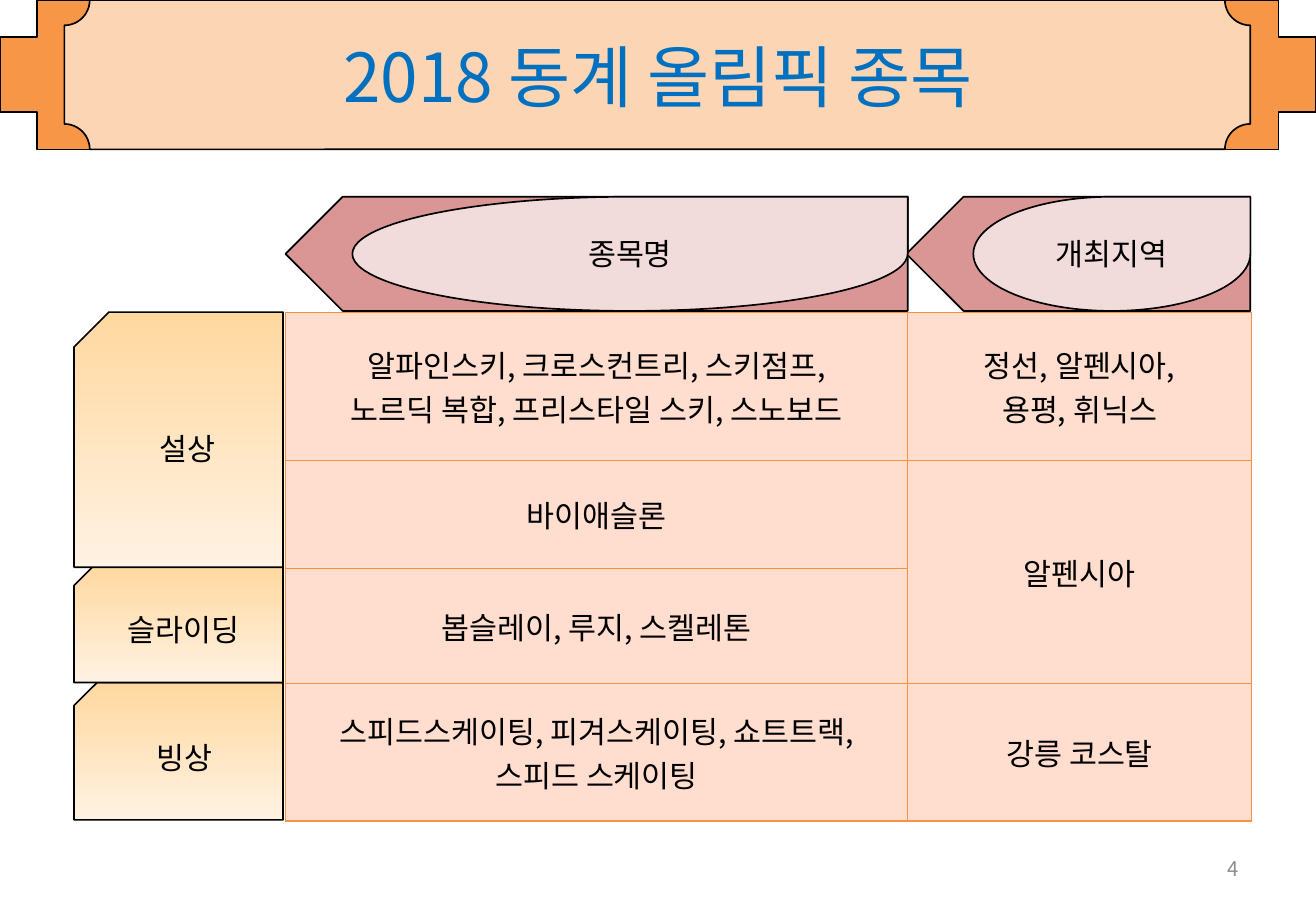
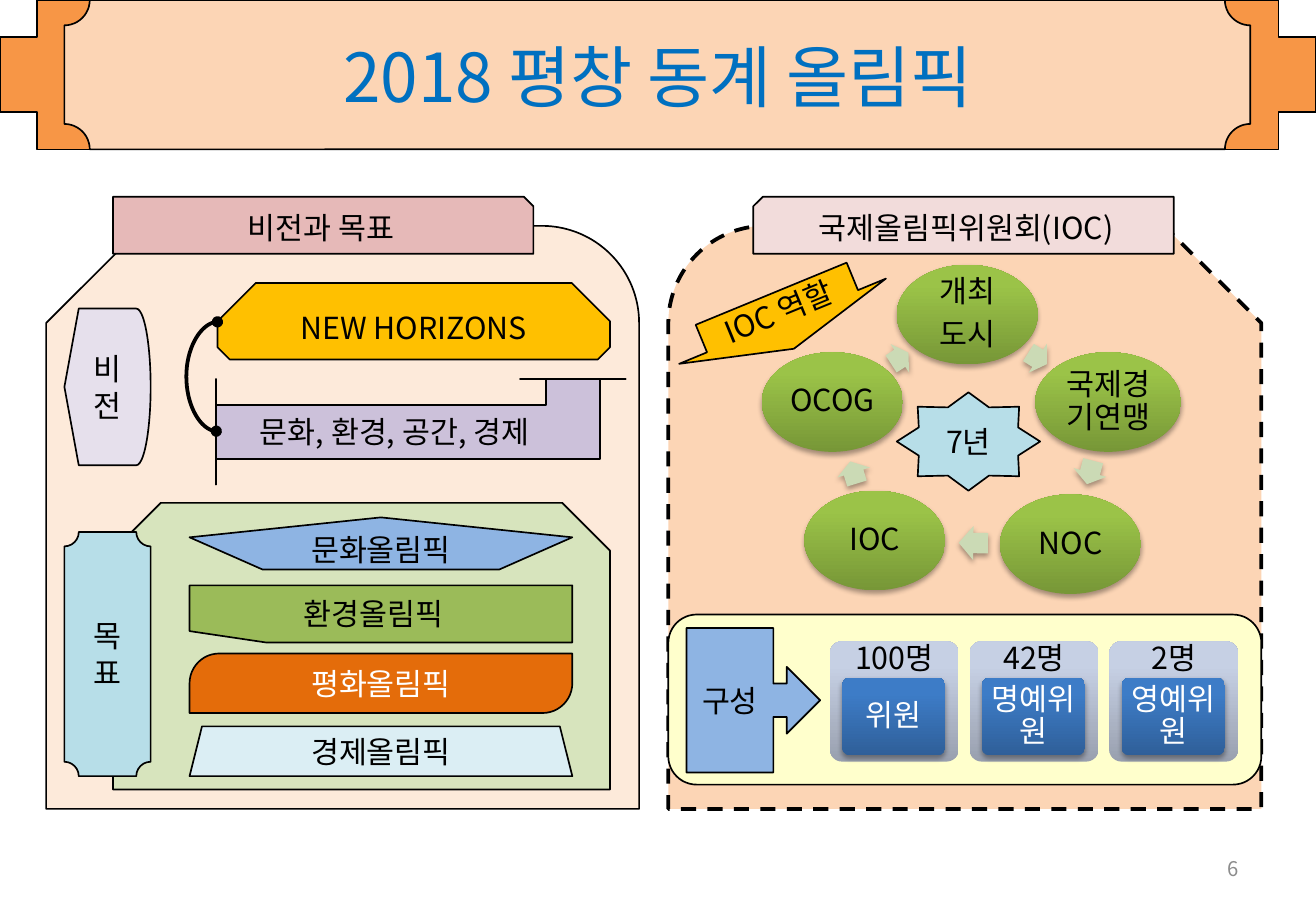
from lxml import etree
from pptx import Presentation
from pptx import util as u
from pptx.dml.color import RGBColor
from pptx.enum import dml, shapes, text
from pptx.oxml.ns import qn

M = shapes.MSO_SHAPE
A = text.PP_ALIGN
FACE = "Noto Sans CJK KR"

BLACK = RGBColor(0x00, 0x00, 0x00)
WHITE = RGBColor(0xFF, 0xFF, 0xFF)
BLUE = RGBColor(0x00, 0x70, 0xC0)
GREY = RGBColor(0x8C, 0x8C, 0x8C)
ORANGE = RGBColor(0xF7, 0x96, 0x46)
PEACH = RGBColor(0xFC, 0xD5, 0xB5)
RULE = RGBColor(0xF6, 0x92, 0x40)
CELL = RGBColor(0xFF, 0xDD, 0xCF)
ROSE = RGBColor(0xD9, 0x96, 0x94)
PINK = RGBColor(0xE6, 0xB9, 0xB8)
PALE = RGBColor(0xF2, 0xDC, 0xDB)
CREAM = RGBColor(0xFD, 0xEA, 0xDA)
GOLD = RGBColor(0xFF, 0xC0, 0x00)
LILAC = RGBColor(0xCC, 0xC1, 0xDA)
MIST = RGBColor(0xE6, 0xE0, 0xEC)
SAGE = RGBColor(0xD7, 0xE4, 0xBD)
SKY = RGBColor(0x8E, 0xB4, 0xE3)
GREEN = RGBColor(0x9B, 0xBB, 0x59)
RUST = RGBColor(0xE4, 0x6C, 0x0A)
ICE = RGBColor(0xDB, 0xEE, 0xF4)
AQUA = RGBColor(0xB7, 0xDE, 0xE8)
LEAF = RGBColor(0xCB, 0xDA, 0xB5)
LEMON = RGBColor(0xFF, 0xFF, 0xCC)

HONEY = (RGBColor(0xFF, 0xF2, 0xE3), RGBColor(0xFF, 0xD8, 0xA0), 1.0)
MOSS = (RGBColor(0x77, 0x97, 0x37), RGBColor(0x9B, 0xC3, 0x48), 0.8)
STEEL = (RGBColor(0x99, 0xA0, 0xAF), RGBColor(0xC6, 0xD0, 0xE4), 0.8)
NAVY = (RGBColor(0x2F, 0x5F, 0x99), RGBColor(0x3D, 0x7C, 0xC7), 0.8)

TIGHT = {"line_spacing": 0.9, "space_after": u.Pt(6)}


def apply(thing, *formats):
    for fmt in formats:
        for key, value in fmt.items():
            setattr(thing, key, value)


def add(parent, tag, **attrs):
    node = etree.SubElement(parent, qn(tag))
    for key, value in attrs.items():
        node.set(key, str(value))
    return node


def pads(x, y):
    return {"margin_left": u.Inches(x), "margin_right": u.Inches(x),
            "margin_top": u.Inches(y), "margin_bottom": u.Inches(y)}


class Deck:
    frame = {"word_wrap": True, "vertical_anchor": text.MSO_ANCHOR.MIDDLE,
             "auto_size": text.MSO_AUTO_SIZE.NONE}
    font = {"name": FACE, "size": u.Pt(18)}
    para = {"alignment": A.CENTER}

    def __init__(self):
        self.show = Presentation()
        apply(self.show, {"slide_width": u.Inches(10.83),
                          "slide_height": u.Inches(7.5)})
        self.base = self.show.slide_layouts[5]
        self.slide = None

    def page(self, title, number):
        self.slide = self.show.slides.add_slide(self.base)
        if len(self.show.slides) == 1:
            self.band()
        head = self.slide.shapes.title
        self.place(head, (0.54, 0, 9.75, 1.25))
        apply(head.text_frame, self.frame)
        self.say(head.text_frame, title, BLUE, size=40)
        self.label((7.76, 6.95, 2.53, 0.4), number, GREY, size=12,
                   alignment=A.RIGHT)

    def band(self):
        bars = (self.box(M.CROSS, (0, 0, 10.83, 1.23), ORANGE),
                self.box(M.PLAQUE, (0.53, 0, 9.76, 1.23), PEACH, adj=[0.17]))
        for i, bar in enumerate(bars):
            bar.element.nvSpPr.cNvPr.set("id", str(20 + i))
            self.base.shapes.element.insert(2 + i, bar.element)

    def place(self, shape, at):
        keys = ("left", "top", "width", "height")
        apply(shape, dict(zip(keys, map(u.Inches, at))))

    def say(self, frame, words, color=BLACK, size=18, **para):
        for i, line in enumerate(words.split("\n")):
            p = frame.add_paragraph() if i else frame.paragraphs[0]
            apply(p, self.para, para)
            run = p.add_run()
            run.text = line
            apply(run.font, self.font, {"size": u.Pt(size)})
            run.font.color.rgb = color

    def label(self, at, words, color=BLACK, pad=(0.1, 0.05), **style):
        item = self.slide.shapes.add_textbox(*map(u.Inches, at))
        apply(item.text_frame, self.frame, pads(*pad))
        self.say(item.text_frame, words, color, **style)

    def paint(self, fill, tone):
        if isinstance(tone, RGBColor):
            fill.solid()
            fill.fore_color.rgb = tone
            return
        fill.gradient()
        fill.gradient_angle = 90
        low, high, end = tone
        for stop, color, spot in zip(fill.gradient_stops, (low, high), (0, end)):
            stop.color.rgb = color
            stop.position = spot

    def box(self, kind, at, tone, words="", color=BLACK, adj=(), flip="",
            turn=0, edge=1, dash=None, shade=False, pad=(0.1, 0.05), **style):
        item = self.slide.shapes.add_shape(kind, *map(u.Inches, at))
        item.shadow.inherit = False
        item.rotation = turn
        for i, value in enumerate(adj):
            item.adjustments[i] = value
        self.paint(item.fill, tone)
        if edge:
            item.line.color.rgb = BLACK
            apply(item.line, {"width": u.Pt(edge), "dash_style": dash})
        else:
            item.line.fill.background()
        form = item.element.spPr
        if flip:
            form.xfrm.set("flip" + flip, "1")
        if shade:
            glow = add(form.find(qn("a:effectLst")), "a:outerShdw",
                       blurRad=u.Pt(3.1), dist=u.Pt(1.8), dir=5400000,
                       rotWithShape=0)
            add(add(glow, "a:srgbClr", val=BLACK), "a:alpha", val=35000)
        if words:
            apply(item.text_frame, self.frame, pads(*pad))
            self.say(item.text_frame, words, color, **style)
        return item

    def curve(self, start, end, bend):
        wire = self.slide.shapes.add_connector(
            shapes.MSO_CONNECTOR.CURVE, *map(u.Inches, start + end))
        wire.line.color.rgb = BLACK
        wire.line.width = u.Pt(2.25)
        form = wire.element.spPr
        add(next(form.iter(qn("a:avLst"))), "a:gd", name="adj1",
            fmla=f"val {bend * 100000}")
        for tag in ("a:headEnd", "a:tailEnd"):
            add(form.find(qn("a:ln")), tag, type="oval")
        add(form, "a:effectLst")

    def grid(self, at, wide, high, rows, spans):
        item = self.slide.shapes.add_table(len(high), len(wide),
                                           *map(u.Inches, at))
        table = item.table
        apply(table, {"first_row": False, "horz_banding": False})
        for col, size in zip(table.columns, wide):
            col.width = u.Inches(size)
        for row, size in zip(table.rows, high):
            row.height = u.Inches(size)
        for r, row in enumerate(rows):
            for c, words in enumerate(row):
                cell = table.cell(r, c)
                self.paint(cell.fill, CELL)
                cell.vertical_anchor = text.MSO_ANCHOR.MIDDLE
                if words:
                    self.say(cell.text_frame, words)
        for first, last in spans:
            table.cell(*first).merge(table.cell(*last))
        for form in item.element.iter(qn("a:tcPr")):
            for i, side in enumerate("LRTB"):
                line = add(form, "a:ln" + side, w=u.Pt(0.75))
                add(add(line, "a:solidFill"), "a:srgbClr", val=RULE)
                form.insert(i, line)

    def finish(self):
        for slide in self.show.slides:
            for form in slide.element.iter(qn("a:rPr")):
                add(form, "a:ea", typeface=FACE)
        self.show.save("out.pptx")


def events(deck):
    deck.page("2018 동계 올림픽 종목", "4")
    for top, tall, words in ((5.62, 1.13, "빙상"), (4.66, 0.96, "슬라이딩"),
                             (2.57, 2.1, "설상")):
        deck.box(M.SNIP_1_RECTANGLE, (0.61, top, 1.72, tall), HONEY, words,
                 flip="H")
    heads = ((2.35, 5.12, "종목명"), (7.46, 2.83, "개최지역"))
    for left, wide, words in heads:
        deck.box(M.PENTAGON, (left, 1.62, wide, 0.94), ROSE, flip="H")
    deck.grid((2.35, 2.57, 7.95, 4.19), (5.12, 2.83), (1.22, 0.89, 0.95, 1.13), (
        ("알파인스키, 크로스컨트리, 스키점프,\n노르딕 복합, 프리스타일 스키, 스노보드",
         "정선, 알펜시아,\n용평, 휘닉스"),
        ("바이애슬론", "알펜시아"),
        ("봅슬레이, 루지, 스켈레톤", ""),
        ("스피드스케이팅, 피겨스케이팅, 쇼트트랙, 스피드 스케이팅", "강릉 코스탈"),
    ), [((1, 1), (2, 1))])
    for left, wide, words in heads:
        deck.box(M.TEAR, (left + 0.55, 1.62, wide - 0.55, 0.94), PALE, words)


def vision(deck):
    deck.box(M.SNIP_ROUND_RECTANGLE, (0.38, 1.86, 4.88, 4.8), CREAM, flip="H")
    deck.box(M.SNIP_1_RECTANGLE, (0.93, 1.62, 3.46, 0.47), PINK, "비전과 목표")
    deck.box(M.SNIP_2_SAME_RECTANGLE, (1.79, 2.33, 3.23, 0.63), GOLD,
             "NEW HORIZONS", adj=[0.5, 0.16])
    deck.box(M.LEFT_UP_ARROW, (1.78, 3.12, 3.37, 0.87), LILAC,
             "문화, 환경, 공간, 경제", adj=[0.51, 0.5, 0])
    deck.box(M.SNIP_2_SAME_RECTANGLE, (0.93, 4.14, 4.09, 2.36), SAGE)
    for kind, top, tall, tone, words, more in (
            (M.REGULAR_PENTAGON, 4.26, 0.43, SKY, "문화올림픽", {}),
            (M.FLOWCHART_CARD, 4.82, 0.47, GREEN, "", {"flip": "V"}),
            (M.ROUND_2_DIAG_RECTANGLE, 5.38, 0.49, RUST, "평화올림픽",
             {"adj": [0.5, 0], "color": WHITE}),
            (M.TRAPEZOID, 5.98, 0.41, ICE, "경제올림픽", {})):
        deck.box(kind, (1.56, top, 3.15, tall), tone, words, **more)
    deck.label((2.4, 4.85, 1.46, 0.4), "환경올림픽", alignment=A.LEFT)
    deck.box(M.PLAQUE, (0.53, 4.38, 0.71, 2.01), AQUA, "목표")
    deck.box(M.FLOWCHART_DISPLAY, (0.53, 2.54, 0.71, 1.29), MIST, "비전")
    deck.curve((1.79, 2.65), (1.78, 3.55), 26)


def council(deck):
    deck.box(M.SNIP_ROUND_RECTANGLE, (5.5, 1.86, 4.88, 4.8), PEACH, edge=2.25,
             dash=dml.MSO_LINE.DASH)
    deck.box(M.SNIP_1_RECTANGLE, (6.2, 1.62, 3.46, 0.47), PALE,
             "국제올림픽위원회(IOC)", flip="H")
    for left, top, wide, words in (
            (7.38, 2.18, 1.16, "개최\n도시"), (8.52, 2.9, 1.2, "국제경기연맹"),
            (8.23, 4.07, 1.16, "NOC"), (6.62, 4.04, 1.16, "IOC"),
            (6.27, 2.9, 1.16, "OCOG")):
        deck.box(M.OVAL, (left, top, wide, 0.82), MOSS, words, edge=0,
                 shade=True, pad=(0.03, 0.03), **TIGHT)
    for left, top, wide, turn in (
            (8.45, 2.81, 0.18, 32.1), (8.87, 3.75, 0.2, 104.9),
            (7.89, 4.33, 0.24, 180.8), (6.93, 3.75, 0.19, 253),
            (7.32, 2.81, 0.17, 327)):
        deck.box(M.RIGHT_ARROW, (left, top, wide, 0.28), LEAF, turn=turn,
                 adj=[0.6, 0.5], edge=0, shade=True)
    deck.box(M.STAR_8_POINT, (7.38, 3.23, 1.18, 0.81), AQUA, "7년")
    deck.box(M.DOWN_ARROW, (5.52, 2.4, 1.84, 0.49), GOLD, "IOC 역할",
             adj=[0.73, 0.5], turn=337.6)
    deck.box(M.ROUNDED_RECTANGLE, (5.5, 5.06, 4.88, 1.4), LEMON)
    for i, (count, role) in enumerate((("100명", "위원"), ("42명", "명예위원"),
                                       ("2명", "영예위원"))):
        left = 6.83 + 1.15 * i
        deck.box(M.ROUNDED_RECTANGLE, (left, 5.28, 1.06, 0.99), STEEL,
                 adj=[0.1], edge=0)
        deck.label((left, 5.28, 1.06, 0.3), count, pad=(0.07, 0.07), **TIGHT)
        deck.box(M.ROUNDED_RECTANGLE, (left + 0.1, 5.58, 0.85, 0.64), NAVY,
                 role, WHITE, adj=[0.1], edge=0, shade=True, pad=(0.05, 0.04),
                 **TIGHT)
    deck.box(M.RIGHT_ARROW_CALLOUT, (5.65, 5.17, 1.1, 1.19), SKY, "구성")


def main():
    deck = Deck()
    events(deck)
    deck.page("2018 평창 동계 올림픽", "6")
    vision(deck)
    council(deck)
    deck.finish()


if __name__ == "__main__":
    main()
